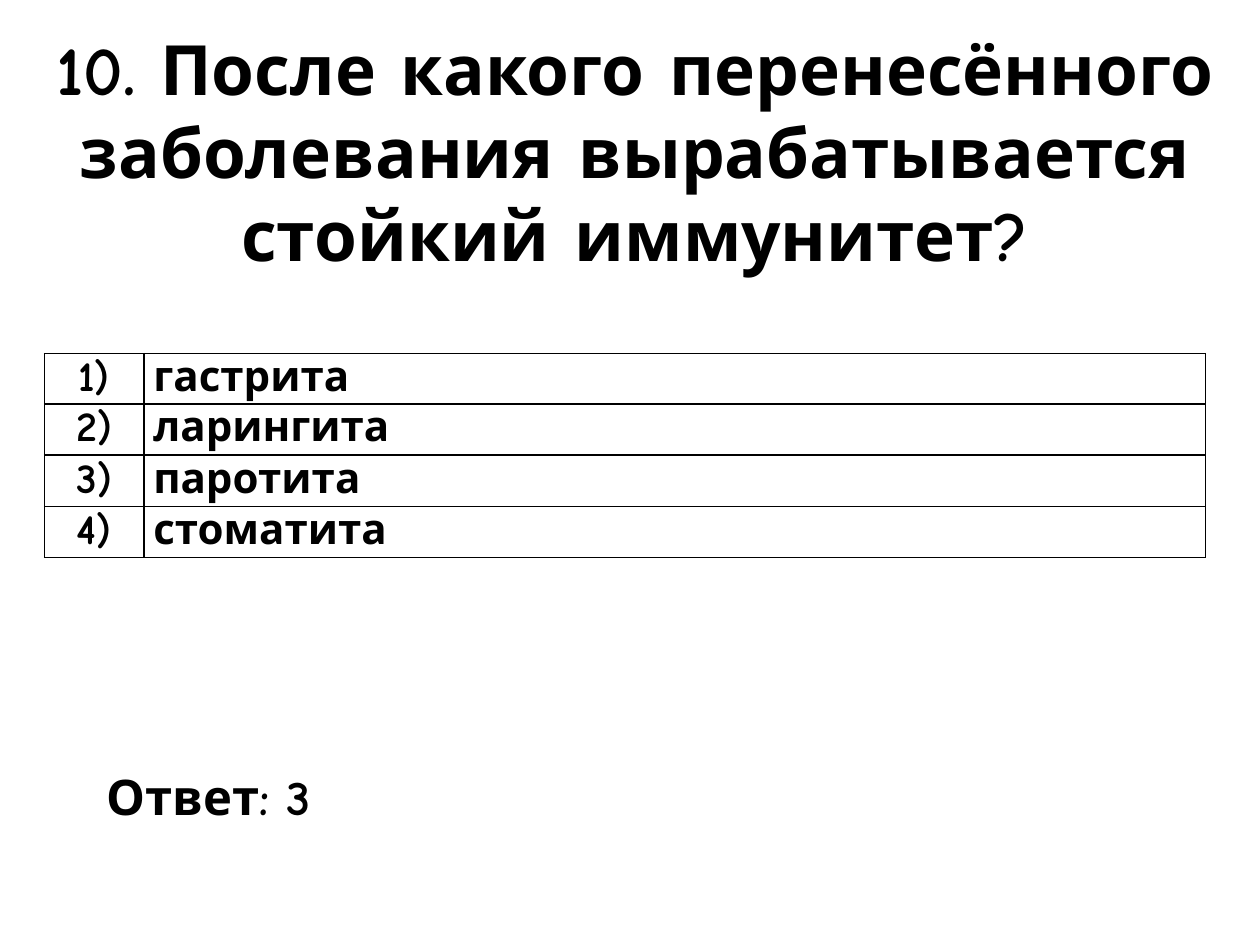
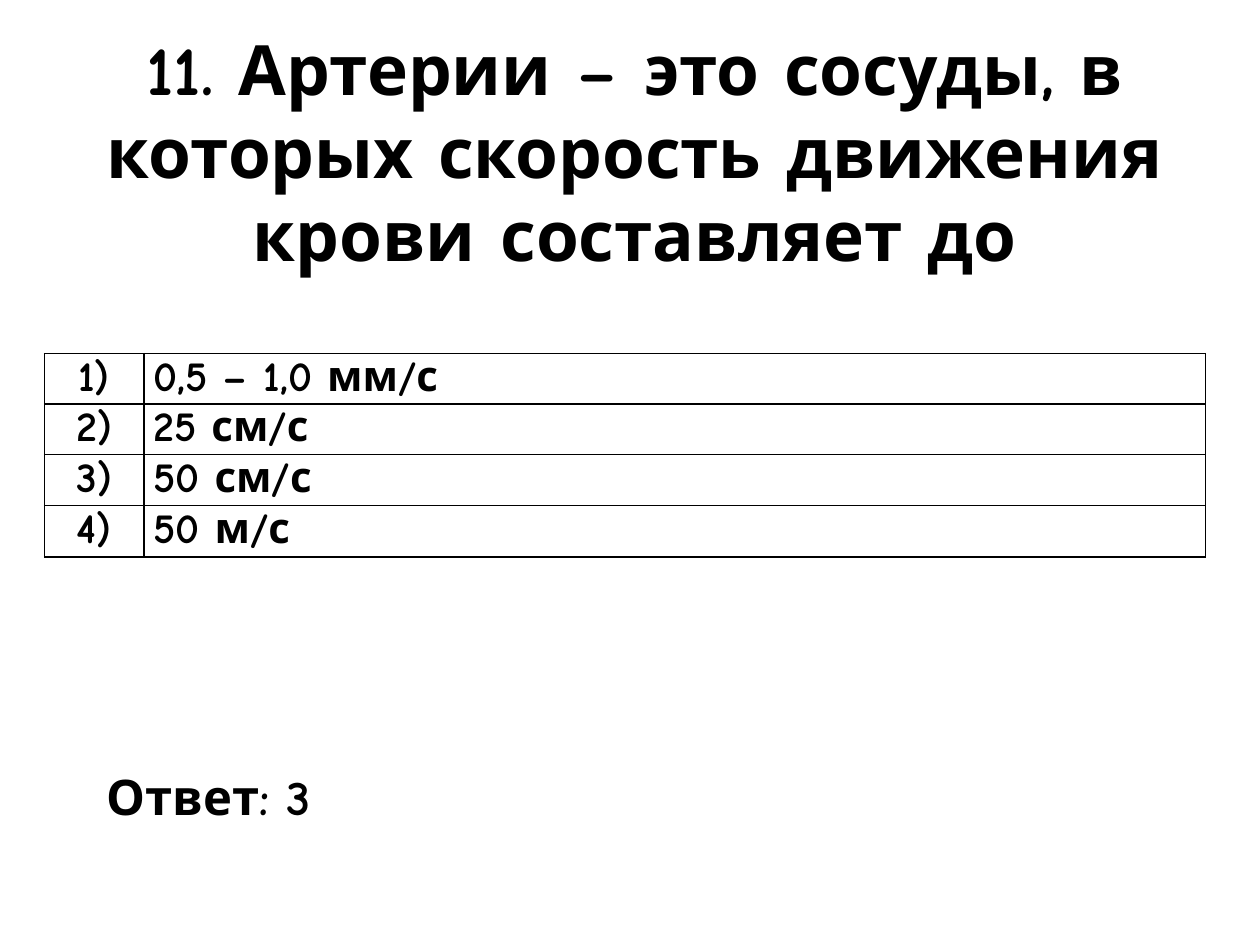
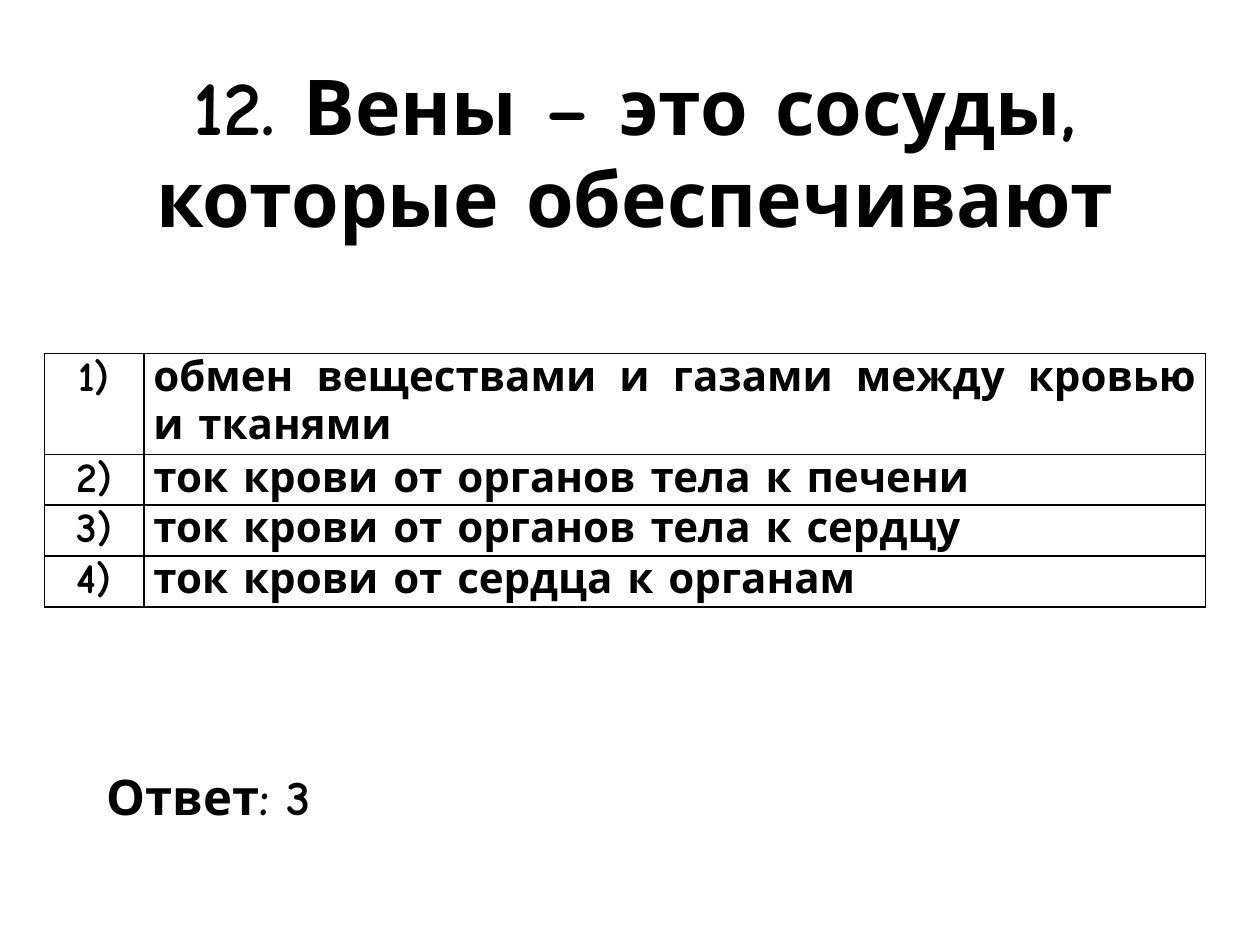
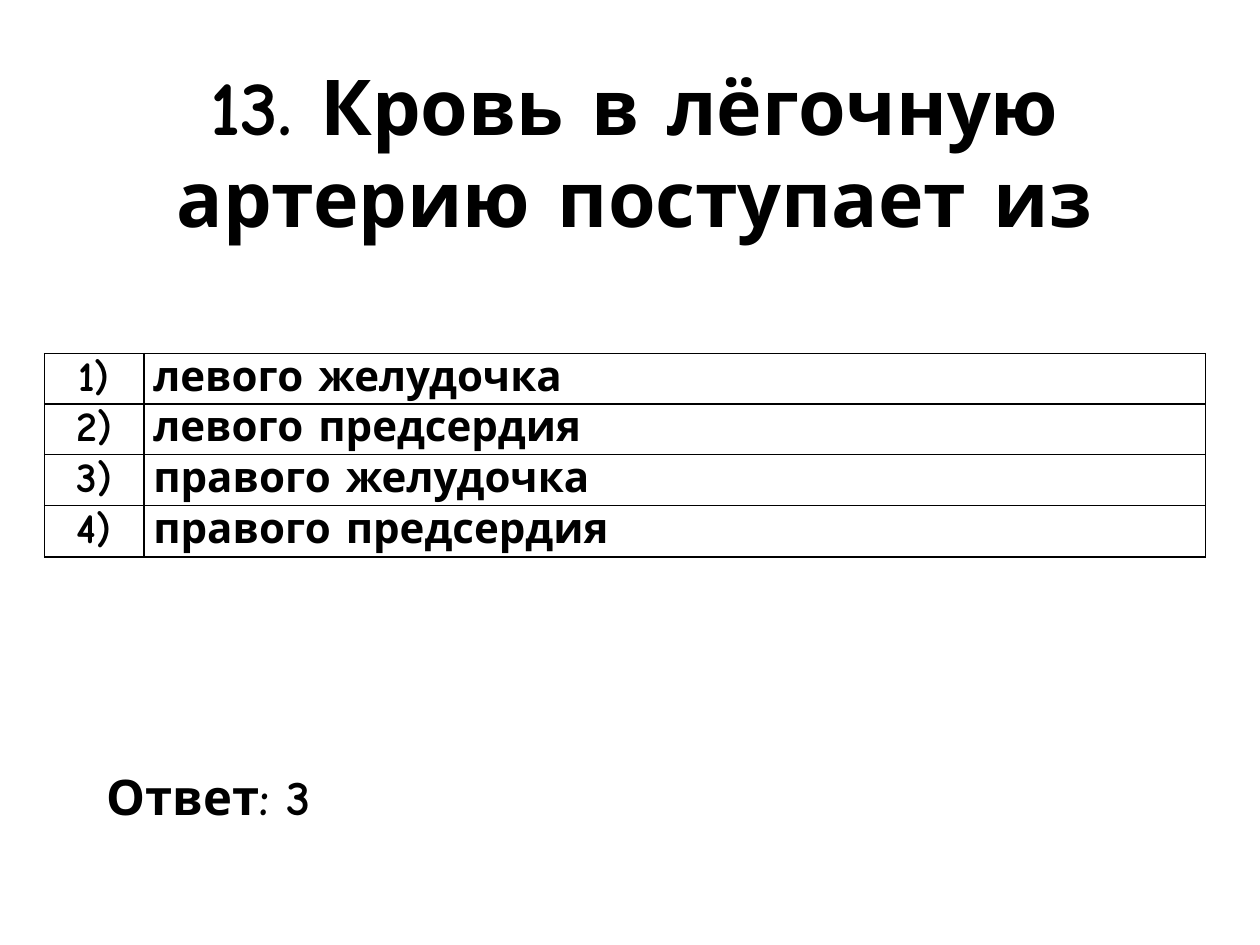
from pptx import Presentation
from pptx.dml.color import RGBColor
from pptx.enum.text import MSO_ANCHOR, MSO_AUTO_SIZE, PP_ALIGN
from pptx.oxml import parse_xml
from pptx.oxml.ns import nsdecls
from pptx.util import Cm, Pt

# Shared style
BLACK = RGBColor(0, 0, 0)
TEXT_FORMAT = {"name": "Comic Neue", "bold": True}
TITLE_SIZE, SHRUNK_TITLE_SIZE = 44, 39.6
OPTION_SIZE, ANSWER_SIZE = 24, 28
BORDER_WIDTH = Pt(1)

# Table grid, in centimetres
OPTION_COLUMNS = (2.0, 21.4)
FIRST_ROW, LAST_ROWS = 0.15, 1.03
WIDE_ROW, NARROW_ROW = 1.03, 0.8
NUMBER_INSET, OPTION_INSET = 0.23, 0.19

# Question, title size, second row height, options, answer
QUESTIONS = [
    ("10. После какого перенесённого заболевания вырабатывается стойкий иммунитет?",
     SHRUNK_TITLE_SIZE, WIDE_ROW,
     ["гастрита", "ларингита", "паротита", "стоматита"], 3),
    ("11. Артерии – это сосуды, в которых скорость движения крови составляет до",
     SHRUNK_TITLE_SIZE, NARROW_ROW,
     ["0,5 – 1,0 мм/с", "25 см/с", "50 см/с", "50 м/с"], 3),
    ("12. Вены – это сосуды, которые обеспечивают",
     TITLE_SIZE, NARROW_ROW,
     ["обмен веществами и газами между кровью и тканями",
      "ток крови от органов тела к печени",
      "ток крови от органов тела к сердцу",
      "ток крови от сердца к органам"], 3),
    ("13. Кровь в лёгочную артерию поступает из",
     TITLE_SIZE, NARROW_ROW,
     ["левого желудочка", "левого предсердия",
      "правого желудочка", "правого предсердия"], 3),
]


def write_text(frame, text, size, alignment):
    paragraph = frame.paragraphs[0]
    paragraph.alignment = alignment
    run = paragraph.add_run()
    run.text = text
    for attribute, value in {**TEXT_FORMAT, "size": Pt(size)}.items():
        setattr(run.font, attribute, value)
    run.font.color.rgb = BLACK


def add_text(slide, box, text, size, alignment, frame_format):
    frame = slide.shapes.add_textbox(*map(Cm, box)).text_frame
    for attribute, value in {"word_wrap": True, **frame_format}.items():
        setattr(frame, attribute, value)
    write_text(frame, text, size, alignment)


def add_borders(cell):
    properties = cell._tc.get_or_add_tcPr()
    for position, side in enumerate(("lnL", "lnR", "lnT", "lnB")):
        properties.insert(position, parse_xml(
            f'<a:{side} {nsdecls("a")} w="{BORDER_WIDTH}"><a:solidFill>'
            f'<a:srgbClr val="{BLACK}"/></a:solidFill></a:{side}>'))


def fill_cell(cell, text, alignment, inset):
    margins = {"margin_left": inset, "margin_right": inset,
               "margin_top": 0, "margin_bottom": 0}
    for attribute, value in margins.items():
        setattr(cell, attribute, Cm(value))
    cell.fill.background()
    add_borders(cell)
    write_text(cell.text_frame, text, OPTION_SIZE, alignment)


def add_options(slide, options, second_row):
    heights = [FIRST_ROW, second_row, LAST_ROWS, LAST_ROWS]
    table = slide.shapes.add_table(
        len(options), len(OPTION_COLUMNS), Cm(0.9), Cm(7.13),
        Cm(sum(OPTION_COLUMNS)), Cm(sum(heights))).table
    table.first_row = table.horz_banding = False
    for column, width in zip(table.columns, OPTION_COLUMNS):
        column.width = Cm(width)
    for number, (row, height, option) in enumerate(zip(table.rows, heights, options), 1):
        row.height = Cm(height)
        number_cell, option_cell = row.cells
        fill_cell(number_cell, f"{number})", PP_ALIGN.CENTER, NUMBER_INSET)
        fill_cell(option_cell, option, PP_ALIGN.JUSTIFY, OPTION_INSET)


def add_question(deck, question, title_size, second_row, options, answer):
    slide = deck.slides.add_slide(deck.slide_layouts[6])
    add_text(slide, (0.7, 0.76, 24.2, 4.57), question, title_size,
             PP_ALIGN.CENTER, {"vertical_anchor": MSO_ANCHOR.MIDDLE})
    add_options(slide, options, second_row)
    add_text(slide, (1.9, 15.32, 7.2, 1.45), f"Ответ: {answer}", ANSWER_SIZE,
             PP_ALIGN.JUSTIFY, {"auto_size": MSO_AUTO_SIZE.SHAPE_TO_FIT_TEXT})


def main():
    deck = Presentation()
    deck.slide_width, deck.slide_height = Cm(25.4), Cm(19.05)
    for question in QUESTIONS:
        add_question(deck, *question)
    deck.save("out.pptx")


if __name__ == "__main__":
    main()
